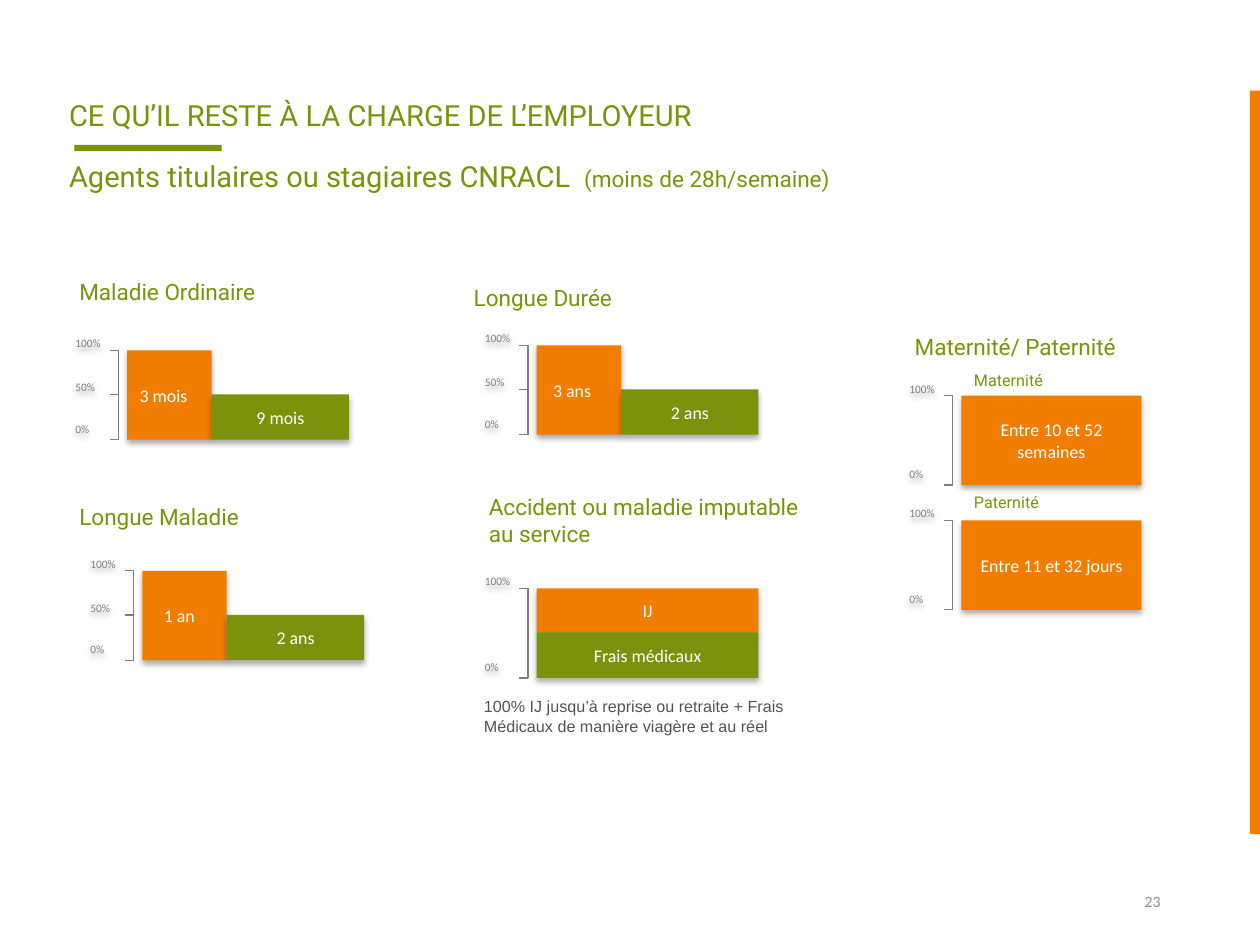
from lxml import etree
from pptx import Presentation
from pptx.dml.color import RGBColor
from pptx.enum.shapes import MSO_CONNECTOR, MSO_SHAPE
from pptx.enum.text import MSO_ANCHOR, PP_ALIGN
from pptx.oxml.ns import qn
from pptx.util import Inches, Pt

RECTANGLE = MSO_SHAPE.RECTANGLE
STRAIGHT = MSO_CONNECTOR.STRAIGHT
LEFT, CENTER, RIGHT = PP_ALIGN.LEFT, PP_ALIGN.CENTER, PP_ALIGN.RIGHT
TOP, MIDDLE = MSO_ANCHOR.TOP, MSO_ANCHOR.MIDDLE

GREEN, ORANGE, WHITE = "7D920C", "F07D00", "FFFFFF"
AXIS_GRAY, LABEL_GRAY, NOTE_GRAY, NUMBER_GRAY = "7F7F7F", "808080", "535355", "8C8C8C"
BAR_HEIGHT, HALF_HEIGHT = 0.71, 0.35
FIRST_WIDTH, SECOND_WIDTH, FULL_WIDTH, LEAVE_WIDTH = 0.67, 1.09, 1.76, 1.43
TICK_LENGTH = 0.07
LABEL_OFFSETS = {"100%": -0.16, "50%": 0.19, "0%": 0.52}
TICK_OFFSETS = {"100%": 0, "50%": 0.35, "0%": BAR_HEIGHT}
THREE_LEVELS = ("100%", "50%", "0%")
TWO_LEVELS = ("100%", "0%")


def color(value):
    return RGBColor.from_string(value)


def add_soft_shadow(shape):
    effects = etree.SubElement(shape._element.spPr, qn("a:effectLst"))
    shadow = etree.SubElement(effects, qn("a:outerShdw"), blurRad=str(Pt(3.5)),
                              dist=str(Pt(2.2)), dir="5400000", rotWithShape="0")
    black = etree.SubElement(shadow, qn("a:srgbClr"), val="000000")
    etree.SubElement(black, qn("a:alpha"), val="32000")


def format_run(run, size, font, font_color):
    run.font.size = Pt(size)
    run.font.name = font
    run.font.color.rgb = color(font_color)


def write(shape, text, size, font, font_color, align=LEFT, anchor=TOP, inset=0.1):
    frame = shape.text_frame
    frame.text = text
    frame.word_wrap = True
    frame.vertical_anchor = anchor
    frame.margin_left = Inches(inset)
    paragraph = frame.paragraphs[0]
    paragraph.alignment = align
    format_run(paragraph.runs[0], size, font, font_color)


def add_text(shapes, left, top, width, height, text, size, font, font_color, **options):
    box = shapes.add_textbox(Inches(left), Inches(top), Inches(width), Inches(height))
    write(box, text, size, font, font_color, **options)
    return box


def add_plain_text(shapes, left, top, text, size=12.9, font="Roboto",
                   font_color=GREEN, width=2.58):
    box = add_text(shapes, left, top, width, 0.44, text, size, font, font_color, inset=0)
    frame = box.text_frame
    frame.margin_top = frame.margin_right = frame.margin_bottom = 0


def add_rectangle(shapes, left, top, width, height, fill):
    shape = shapes.add_shape(RECTANGLE, Inches(left), Inches(top),
                             Inches(width), Inches(height))
    shape.fill.solid()
    shape.fill.fore_color.rgb = color(fill)
    shape.line.fill.background()
    shape.shadow.inherit = False
    return shape


def add_bar(shapes, left, top, width, height, fill, text, align=CENTER, inset=0.1):
    bar = add_rectangle(shapes, left, top, width, height, fill)
    bar._element.spPr.remove(bar._element.spPr.find(qn("a:effectLst")))
    add_soft_shadow(bar)
    write(bar, text, 10.2, "Calibri", WHITE, align=align, anchor=MIDDLE, inset=inset)


def add_line(shapes, start_x, start_y, end_x, end_y):
    line = shapes.add_connector(STRAIGHT, Inches(start_x), Inches(start_y),
                                Inches(end_x), Inches(end_y))
    line.line.color.rgb = color(AXIS_GRAY)
    line.line.width = Pt(0.75)
    etree.SubElement(line._element.spPr, qn("a:effectLst"))


def add_axis(shapes, bar_left, top, levels):
    axis = bar_left - TICK_LENGTH
    for level in levels:
        label = add_text(shapes, bar_left - 0.51, top + LABEL_OFFSETS[level], 0.5, 0.21,
                         level, 6.5, "Calibri", LABEL_GRAY)
        add_soft_shadow(label)
        tick = top + TICK_OFFSETS[level]
        add_line(shapes, axis, tick, axis - TICK_LENGTH, tick)
    add_line(shapes, axis, top, axis, top + BAR_HEIGHT)


def add_two_period_chart(slide, left, top, heading, heading_left, heading_top,
                         first, second, first_inset):
    shapes = slide.shapes.add_group_shape().shapes
    add_plain_text(shapes, heading_left, heading_top, heading)
    add_bar(shapes, left, top, FIRST_WIDTH, BAR_HEIGHT, ORANGE, first, LEFT, first_inset)
    add_bar(shapes, left + FIRST_WIDTH, top + HALF_HEIGHT, SECOND_WIDTH,
            BAR_HEIGHT - HALF_HEIGHT, GREEN, second)
    add_axis(shapes, left, top, THREE_LEVELS)


def add_accident_chart(slide, left, top):
    shapes = slide.shapes.add_group_shape().shapes
    add_plain_text(shapes, 3.88, 3.91, "Accident ou maladie imputable au service")
    add_bar(shapes, left, top, FULL_WIDTH, HALF_HEIGHT, ORANGE, "IJ")
    add_bar(shapes, left, top + HALF_HEIGHT, FULL_WIDTH, BAR_HEIGHT - HALF_HEIGHT,
            GREEN, "Frais médicaux")
    add_axis(shapes, left, top, TWO_LEVELS)


def add_leave_chart(slide, left, top, name, name_top, duration):
    shapes = slide.shapes.add_group_shape().shapes
    add_plain_text(shapes, 7.73, name_top, name, size=9.2)
    add_bar(shapes, left, top, LEAVE_WIDTH, BAR_HEIGHT, ORANGE, duration)
    add_axis(shapes, left, top, TWO_LEVELS)


def add_titles(shapes):
    title = add_text(shapes, 0.45, 0.72, 5.26, 0.38,
                     "CE QU’IL RESTE À LA CHARGE DE L’EMPLOYEUR", 16.6, "Roboto", GREEN)
    title.text_frame.word_wrap = False
    add_rectangle(shapes, 0.59, 1.15, 1.17, 0.05, GREEN)
    subtitle = add_text(shapes, 0.45, 1.21, 7.97, 0.38,
                        "Agents titulaires ou stagiaires CNRACL  ", 16.6, "Roboto", GREEN)
    run = subtitle.text_frame.paragraphs[0].add_run()
    run.text = "(moins de 28h/semaine)"
    format_run(run, 12.9, "Roboto", GREEN)


def main():
    presentation = Presentation()
    presentation.slide_width = Inches(10)
    presentation.slide_height = Inches(7.5)
    slide = presentation.slides.add_slide(presentation.slide_layouts[6])
    shapes = slide.shapes

    add_titles(shapes)
    add_rectangle(shapes, 9.92, 0.72, 0.08, 5.9, ORANGE)

    add_two_period_chart(slide, 1.01, 2.78, "Maladie Ordinaire", 0.63, 2.21,
                         "3 mois", "9 mois", 0.1)
    add_two_period_chart(slide, 4.26, 2.74, "Longue Durée", 3.76, 2.25,
                         "3 ans", "2 ans", 0.13)
    add_two_period_chart(slide, 1.13, 4.53, "Longue Maladie", 0.63, 3.99,
                         "1 an", "2 ans", 0.17)
    add_accident_chart(slide, 4.26, 4.67)
    add_plain_text(shapes, 3.84, 5.53,
                   "100% IJ jusqu’à reprise ou retraite + Frais Médicaux "
                   "de manière viagère et au réel",
                   size=9.2, font="Arial", font_color=NOTE_GRAY, width=2.75)

    add_plain_text(shapes, 7.26, 2.64, "Maternité/ Paternité")
    add_leave_chart(slide, 7.63, 3.14, "Maternité", 2.94, "Entre 10 et 52 semaines")
    add_leave_chart(slide, 7.63, 4.13, "Paternité", 3.91, "Entre 11 et 32 jours")

    add_text(shapes, 7.06, 6.95, 2.25, 0.4, "23", 9, "Calibri", NUMBER_GRAY,
             align=RIGHT, anchor=MIDDLE)
    presentation.save("out.pptx")


if __name__ == "__main__":
    main()
